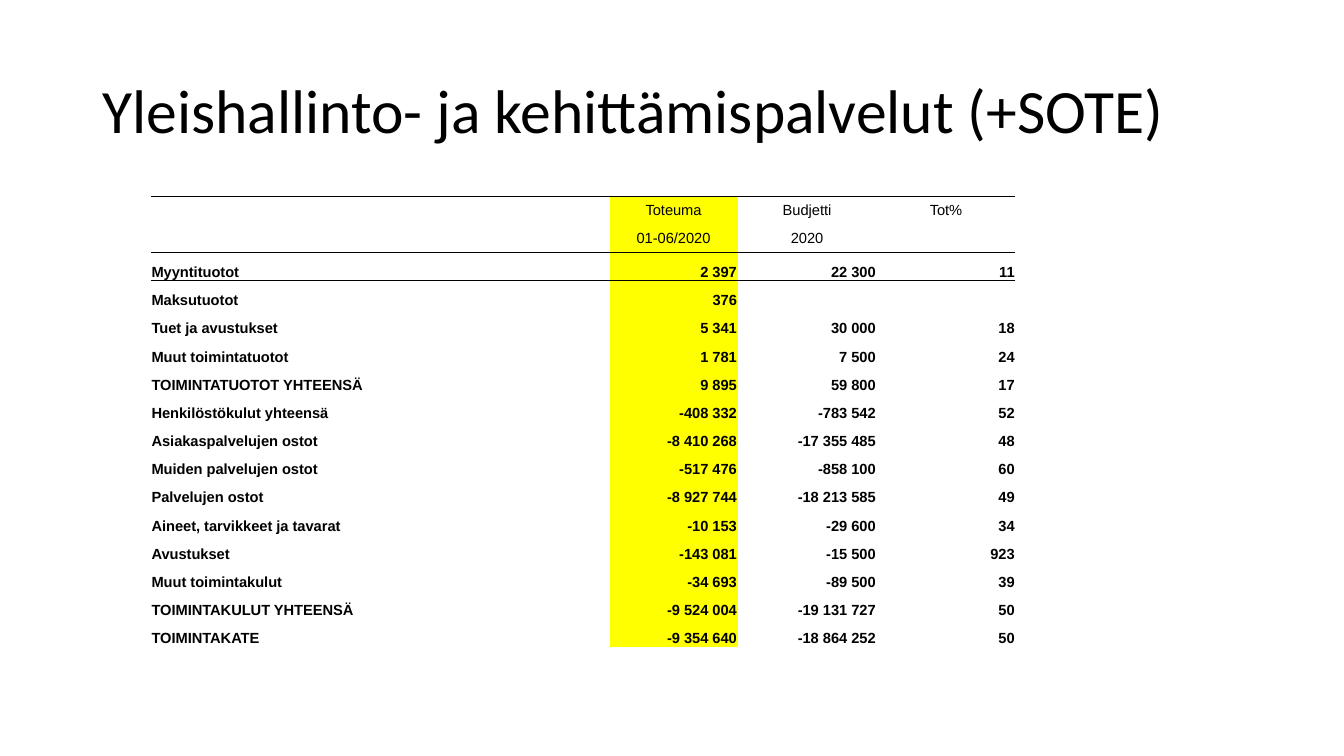
"""Build the budget follow-up slide for general administration and development services."""
from lxml.etree import SubElement
from pptx import Presentation
from pptx.dml.color import RGBColor
from pptx.enum.text import MSO_ANCHOR, PP_ALIGN
from pptx.oxml import parse_xml
from pptx.oxml.ns import nsdecls, qn
from pptx.util import Cm, Pt

COLORS = {"text": "000000", "rule": "000000", "highlight": "FFFF00"}
NO_STYLE = "{2D5ABB26-0587-4C30-8999-92F81FD0307C}"
COLUMN_WIDTHS = [11.56, 3.23, 3.5, 3.5]
ROW_HEIGHT = 0.71
HEADER_ROWS = 2
ACTUAL_COLUMN = 1
RULES = {0: "lnT", 1: "lnB", 2: "lnT"}
ROWS = [
    ("", "Toteuma", "Budjetti", "Tot%"),
    ("", "01-06/2020", "2020", ""),
    ("Myyntituotot", "2 397", "22 300", "11"),
    ("Maksutuotot", "376", "", ""),
    ("Tuet ja avustukset", "5 341", "30 000", "18"),
    ("Muut toimintatuotot", "1 781", "7 500", "24"),
    ("TOIMINTATUOTOT YHTEENSÄ", "9 895", "59 800", "17"),
    ("Henkilöstökulut yhteensä", "-408 332", "-783 542", "52"),
    ("Asiakaspalvelujen ostot", "-8 410 268", "-17 355 485", "48"),
    ("Muiden palvelujen ostot", "-517 476", "-858 100", "60"),
    ("Palvelujen ostot", "-8 927 744", "-18 213 585", "49"),
    ("Aineet, tarvikkeet ja tavarat", "-10 153", "-29 600", "34"),
    ("Avustukset", "-143 081", "-15 500", "923"),
    ("Muut toimintakulut", "-34 693", "-89 500", "39"),
    ("TOIMINTAKULUT YHTEENSÄ", "-9 524 004", "-19 131 727", "50"),
    ("TOIMINTAKATE", "-9 354 640", "-18 864 252", "50"),
]


def format_run(run, font_name, size, bold=False):
    run.font.name = font_name
    run.font.size = Pt(size)
    run.font.bold = bold
    run.font.color.rgb = RGBColor.from_string(COLORS["text"])


def add_rule(cell, edge):
    cell._tc.get_or_add_tcPr().insert(0, parse_xml(
        f'<a:{edge} {nsdecls("a")} w="{Pt(0.5)}"><a:solidFill>'
        f'<a:srgbClr val="{COLORS["rule"]}"/></a:solidFill></a:{edge}>'))


presentation = Presentation()
presentation.slide_width = Cm(33.87)
presentation.slide_height = Cm(19.05)
slide = presentation.slides.add_slide(presentation.slide_layouts[5])

title = slide.shapes.title
title.left, title.top, title.width, title.height = Cm(2.33), Cm(1.01), Cm(29.21), Cm(3.68)
title.text_frame.text = "Yleishallinto- ja kehittämispalvelut (+SOTE)"
title.text_frame.vertical_anchor = MSO_ANCHOR.MIDDLE
title_paragraph = title.text_frame.paragraphs[0]
title_paragraph.alignment = PP_ALIGN.LEFT
title_paragraph.line_spacing = 0.9
format_run(title_paragraph.runs[0], "Calibri", 44)

table = slide.shapes.add_table(
    len(ROWS), len(COLUMN_WIDTHS), Cm(3.8), Cm(4.94),
    Cm(sum(COLUMN_WIDTHS)), Cm(ROW_HEIGHT * len(ROWS))).table
table.first_row = False
table.horz_banding = False
table._tbl.tblPr.find(qn("a:tableStyleId")).text = NO_STYLE
for column, width in zip(table.columns, COLUMN_WIDTHS):
    column.width = Cm(width)

for row_index, values in enumerate(ROWS):
    table.rows[row_index].height = Cm(ROW_HEIGHT)
    is_header = row_index < HEADER_ROWS
    for column_index, value in enumerate(values):
        cell = table.cell(row_index, column_index)
        cell.margin_left = cell.margin_right = cell.margin_top = Cm(0.02)
        cell.margin_bottom = 0
        cell.vertical_anchor = MSO_ANCHOR.MIDDLE if is_header else MSO_ANCHOR.BOTTOM
        if column_index == ACTUAL_COLUMN:
            cell.fill.solid()
            cell.fill.fore_color.rgb = RGBColor.from_string(COLORS["highlight"])
        else:
            cell.fill.background()
        if row_index in RULES:
            add_rule(cell, RULES[row_index])
        paragraph = cell.text_frame.paragraphs[0]
        if value:
            paragraph.text = value
            format_run(paragraph.runs[0], "Arial", 10.5, not is_header)
        else:
            SubElement(paragraph._p, qn("a:endParaRPr"), sz="1050")
        if is_header:
            paragraph.alignment = PP_ALIGN.CENTER
        else:
            paragraph.alignment = PP_ALIGN.RIGHT if column_index else PP_ALIGN.LEFT

presentation.save("out.pptx")
